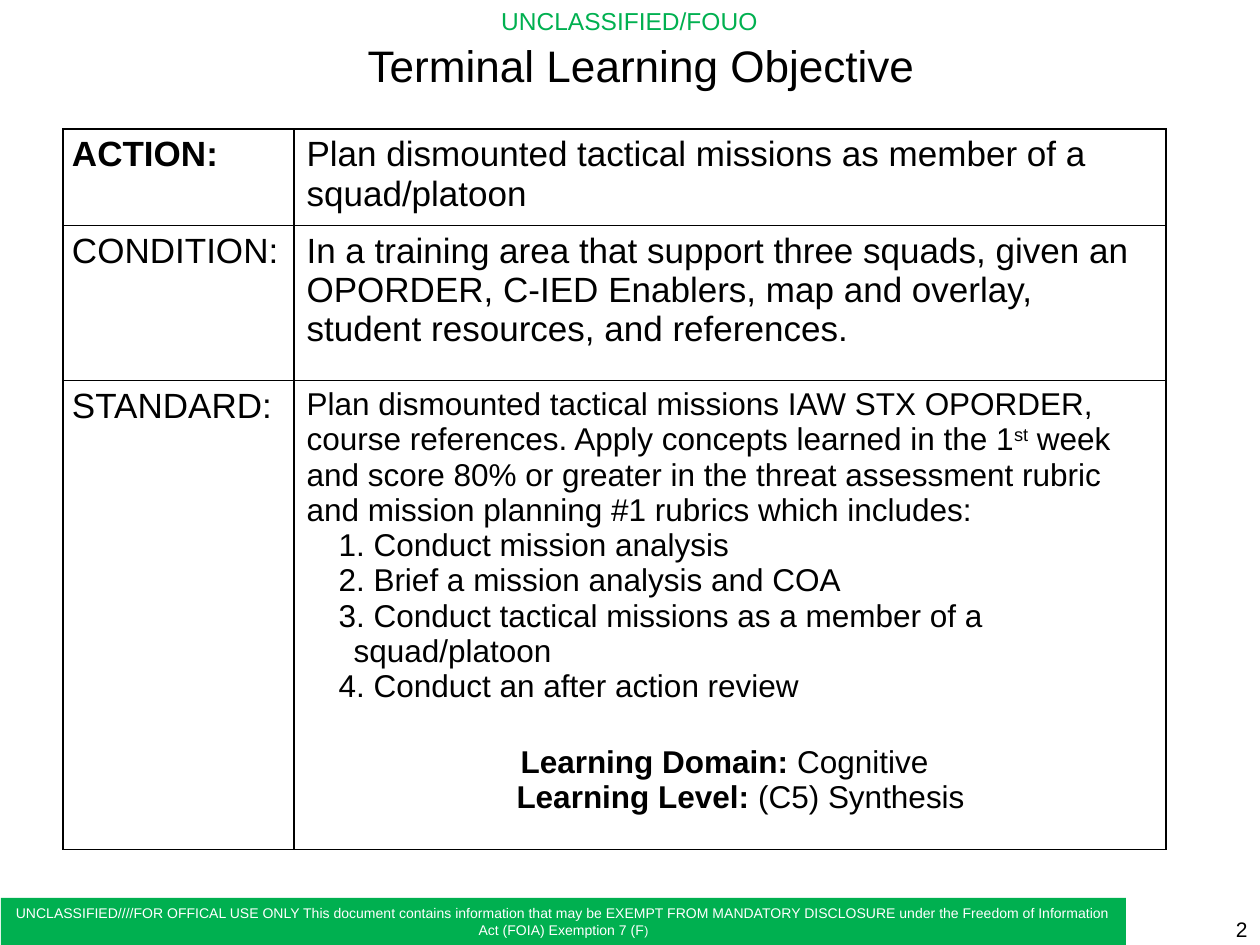
"""Build the Terminal Learning Objective slide."""
from lxml import etree
from pptx import Presentation
from pptx import util as u
from pptx.dml.color import RGBColor
from pptx.enum import shapes, text
from pptx.oxml import ns

PX = 914400 // 126
BLACK = RGBColor(0, 0, 0)
WHITE = RGBColor(255, 255, 255)
GREEN = RGBColor(0x00, 0xB0, 0x50)


def px(*lengths):
    return [u.Emu(length * PX) for length in lengths]


def style(font, size, color=BLACK, bold=None):
    font.name = "Arial"
    font.size = u.Pt(size)
    font.color.rgb = color
    font.bold = bold


prs = Presentation()
prs.slide_width, prs.slide_height = px(1260, 945)
slide = prs.slides.add_slide(prs.slide_layouts[5])

marking = slide.shapes.add_textbox(*px(485, 0, 289, 43)).text_frame
marking.word_wrap = False
marking.text = "UNCLASSIFIED/FOUO"
marking.paragraphs[0].alignment = text.PP_ALIGN.CENTER
style(marking.paragraphs[0].font, 14, GREEN)

banner = slide.shapes.add_shape(shapes.MSO_SHAPE.RECTANGLE, *px(1, 898, 1125, 47))
banner.shadow.inherit = False
banner.fill.solid()
banner.fill.fore_color.rgb = GREEN
banner.line.fill.background()
notice = banner.text_frame.paragraphs[0]
notice.alignment = text.PP_ALIGN.CENTER
for words, size in (
    ("UNCLASSIFIED////FOR OFFICAL USE ONLY This document contains information that may be "
     "EXEMPT FROM MANDATORY DISCLOSURE under the Freedom of Information Act (FOIA) Exemption 7 (F", 8),
    (")", 7),
):
    run = notice.add_run()
    run.text = words
    style(run.font, size, WHITE)

page = slide.shapes.add_textbox(*px(966, 914, 294, 31)).text_frame
page.word_wrap = True
page.vertical_anchor = text.MSO_ANCHOR.MIDDLE
page.text = "2"
page.paragraphs[0].alignment = text.PP_ALIGN.RIGHT
style(page.paragraphs[0].font, 12)

title = slide.shapes.title
title.left, title.top, title.width, title.height = px(74, 43, 1134, 91)
heading = title.text_frame
heading.text = "Terminal Learning Objective"
heading.auto_size = text.MSO_AUTO_SIZE.NONE
heading.vertical_anchor = text.MSO_ANCHOR.MIDDLE
heading.margin_top, heading.margin_bottom = px(0, 48)
heading.paragraphs[0].alignment = text.PP_ALIGN.CENTER
style(heading.paragraphs[0].font, 25.2)

widths = px(231, 872)
heights = px(90, 155, 443)
objective = slide.shapes.add_table(
    len(heights), len(widths), *px(63, 129), sum(widths), sum(heights)).table
objective.first_row = objective.horz_banding = False
for column, width in zip(objective.columns, widths):
    column.width = width
for row, height in zip(objective.rows, heights):
    row.height = height

for cell in objective.iter_cells():
    properties = cell._tc.get_or_add_tcPr()
    for side in ("lnL", "lnR", "lnT", "lnB"):
        border = etree.SubElement(properties, ns.qn(f"a:{side}"), w=str(u.Pt(1)))
        paint = etree.SubElement(border, ns.qn("a:solidFill"))
        etree.SubElement(paint, ns.qn("a:srgbClr"), val=str(BLACK))
    cell.fill.solid()
    cell.fill.fore_color.rgb = WHITE

rows = (
    ("ACTION:", True, "Plan dismounted tactical missions as member of a squad/platoon"),
    ("CONDITION:", False, "In a training area that support three squads, given an OPORDER, "
     "C-IED Enablers, map and overlay, student resources, and references."),
    ("STANDARD:", False, ""),
)
for index, (label, bold, details) in enumerate(rows):
    label_cell = objective.cell(index, 0)
    label_cell.margin_left, label_cell.margin_right = px(9, 9)
    label_cell.margin_top = label_cell.margin_bottom = 0
    label_cell.text = label
    label_line = label_cell.text_frame.paragraphs[0]
    label_line.line_spacing = 1.15
    style(label_line.font, 20, bold=bold)
    if details:
        detail_cell = objective.cell(index, 1)
        detail_cell.text = details
        style(detail_cell.text_frame.paragraphs[0].font, 20, bold=False)

standard = objective.cell(2, 1).text_frame
criteria = standard.paragraphs[0]
for words, baseline in (
    ("Plan dismounted tactical missions IAW STX OPORDER, course references. "
     "Apply concepts learned in the 1", 0),
    ("st", 30000),
    (" week and score 80% or greater in the threat assessment rubric "
     "and mission planning #1 rubrics which includes:", 0),
):
    run = criteria.add_run()
    run.text = words
    if baseline:
        run._r.get_or_add_rPr().set("baseline", str(baseline))
style(criteria.font, 18)

for task in (
    "Conduct mission analysis",
    "Brief a mission analysis and COA",
    "Conduct tactical missions as a member of a squad/platoon",
    "Conduct an after action review",
):
    step = standard.add_paragraph()
    step.text = " " + task
    layout = step._p.get_or_add_pPr()
    layout.set("marL", str(47 * PX))
    layout.set("indent", str(-15 * PX))
    etree.SubElement(layout, ns.qn("a:buFont"), typeface="+mj-lt")
    etree.SubElement(layout, ns.qn("a:buAutoNum"), type="arabicPeriod")
    style(step.font, 18)

for label, value, indent, gap in (
    ("Learning Domain: ", "Cognitive", 214, 23),
    ("Learning Level: ", "(C5) Synthesis", 210, 0),
):
    learning = standard.add_paragraph()
    learning._p.get_or_add_pPr().set("marL", str(indent * PX))
    learning.space_before = u.Pt(gap)
    for words, bold in ((label, True), (value, False)):
        run = learning.add_run()
        run.text = words
        run.font.bold = bold
    style(learning.font, 18)

prs.save("out.pptx")
